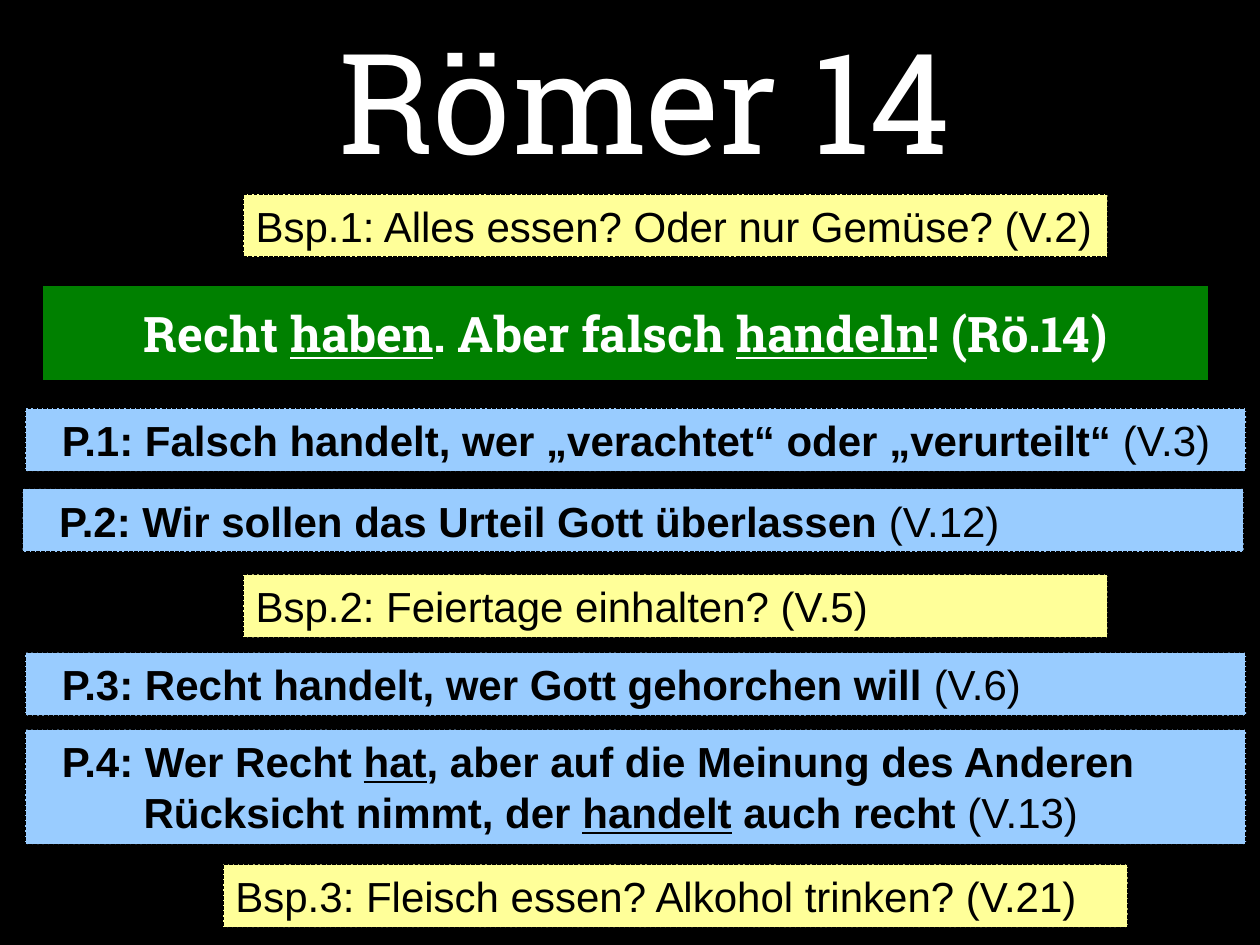
import pptx
import pptx.util
from pptx.dml.color import RGBColor
from pptx.enum.dml import MSO_LINE
from pptx.enum.shapes import MSO_SHAPE
from pptx.enum.text import MSO_ANCHOR, MSO_AUTO_SIZE, PP_ALIGN
from pptx.util import Inches, Pt

BLACK = RGBColor(0x00, 0x00, 0x00)
WHITE = RGBColor(0xFF, 0xFF, 0xFF)
GREEN = RGBColor(0x00, 0x80, 0x00)
BLUE = RGBColor(0x99, 0xCC, 0xFF)
YELLOW = RGBColor(0xFF, 0xFF, 0x99)

PLAIN, BOLD, UNDERLINED = "", "b", "bu"

EXAMPLES = [
    (1.93, 1.54, 6.86, "Bsp.1: Alles essen? Oder nur Gemüse? (V.2)"),
    (1.93, 4.56, 6.86, "Bsp.2: Feiertage einhalten? (V.5)"),
    (1.77, 6.86, 7.18, "Bsp.3: Fleisch essen? Alkohol trinken? (V.21)"),
]

POINTS = [
    (0.2, 3.24, 0.5, [[("P.1: Falsch handelt, wer „verachtet“ oder „verurteilt“ ", BOLD),
                       ("(V.3)", PLAIN)]]),
    (0.18, 3.88, 0.5, [[("P.2: Wir sollen das Urteil Gott überlassen ", BOLD),
                        ("(V.12)", PLAIN)]]),
    (0.2, 5.18, 0.5, [[("P.3: Recht handelt, wer Gott gehorchen will ", BOLD),
                       ("(V.6)", PLAIN)]]),
    (0.2, 5.79, 0.91, [[("P.4: Wer Recht ", BOLD), ("hat", UNDERLINED),
                        (", aber auf die Meinung des Anderen", BOLD)],
                       [("Rücksicht nimmt, der ", BOLD), ("handelt", UNDERLINED),
                        (" auch recht ", BOLD), ("(V.13)", PLAIN)]]),
]

THESIS = [[("Recht ", BOLD), ("haben", UNDERLINED), (". Aber falsch ", BOLD),
           ("handeln", UNDERLINED), ("! (Rö.14)", BOLD)]]


def format_font(font, name, size, color):
    font.name = name
    font.size = Pt(size)
    font.color.rgb = color


def write_lines(frame, lines, align, name, size, color):
    for index, spans in enumerate(lines):
        para = frame.add_paragraph() if index else frame.paragraphs[0]
        para.alignment = align
        for text, style in spans:
            span = para.add_run()
            span.text = text
            format_font(span.font, name, size, color)
            span.font.bold = "b" in style
            span.font.underline = "u" in style


def add_bar(page, left, top, width, height, fill, line_width):
    bar = page.shapes.add_shape(MSO_SHAPE.RECTANGLE, Inches(left), Inches(top),
                                Inches(width), Inches(height))
    bar.shadow.inherit = False
    bar.fill.solid()
    bar.fill.fore_color.rgb = fill
    bar.line.color.rgb = BLACK
    bar.line.width = Pt(line_width)
    return bar


def add_note(page, left, top, width, height, fill, lines):
    note = add_bar(page, left, top, width, height, fill, 0.75)
    note.line.dash_style = MSO_LINE.SQUARE_DOT
    frame = note.text_frame
    frame.word_wrap = True
    frame.vertical_anchor = MSO_ANCHOR.TOP
    frame.auto_size = MSO_AUTO_SIZE.SHAPE_TO_FIT_TEXT
    write_lines(frame, lines, PP_ALIGN.LEFT, "Arial", 24, BLACK)
    return frame


def add_point(page, left, top, height, lines):
    frame = add_note(page, left, top, 9.69, height, BLUE, lines)
    frame.margin_left = Inches(0.29)
    for para in frame.paragraphs[1:]:
        para._p.get_or_add_pPr().set("marL", str(Inches(0.65)))


def add_thesis(page):
    bar = add_bar(page, 0.32, 2.25, 9.29, 0.79, GREEN, 3)
    bar.text_frame.word_wrap = True
    bar.text_frame.vertical_anchor = MSO_ANCHOR.MIDDLE
    write_lines(bar.text_frame, THESIS, PP_ALIGN.CENTER, "Roboto Slab", 28, WHITE)


def set_title(page, text):
    title = page.shapes.title
    title.left, title.top = Inches(0.62), Inches(0)
    title.width, title.height = Inches(9), Inches(1.57)
    frame = title.text_frame
    frame.text = text
    frame.auto_size = MSO_AUTO_SIZE.NONE
    frame.vertical_anchor = MSO_ANCHOR.MIDDLE
    para = frame.paragraphs[0]
    para.alignment = PP_ALIGN.CENTER
    format_font(para.runs[0].font, "Roboto Slab", 80, WHITE)


def main():
    deck = pptx.Presentation()
    deck.slide_width, deck.slide_height = Inches(10), Inches(7.5)
    page = deck.slides.add_slide(deck.slide_layouts[5])
    page.background.fill.solid()
    page.background.fill.fore_color.rgb = BLACK
    set_title(page, "Römer 14")
    add_thesis(page)
    for left, top, width, text in EXAMPLES:
        add_note(page, left, top, width, 0.5, YELLOW, [[(text, PLAIN)]])
    for left, top, height, lines in POINTS:
        add_point(page, left, top, height, lines)
    deck.save("out.pptx")


if __name__ == "__main__":
    main()
